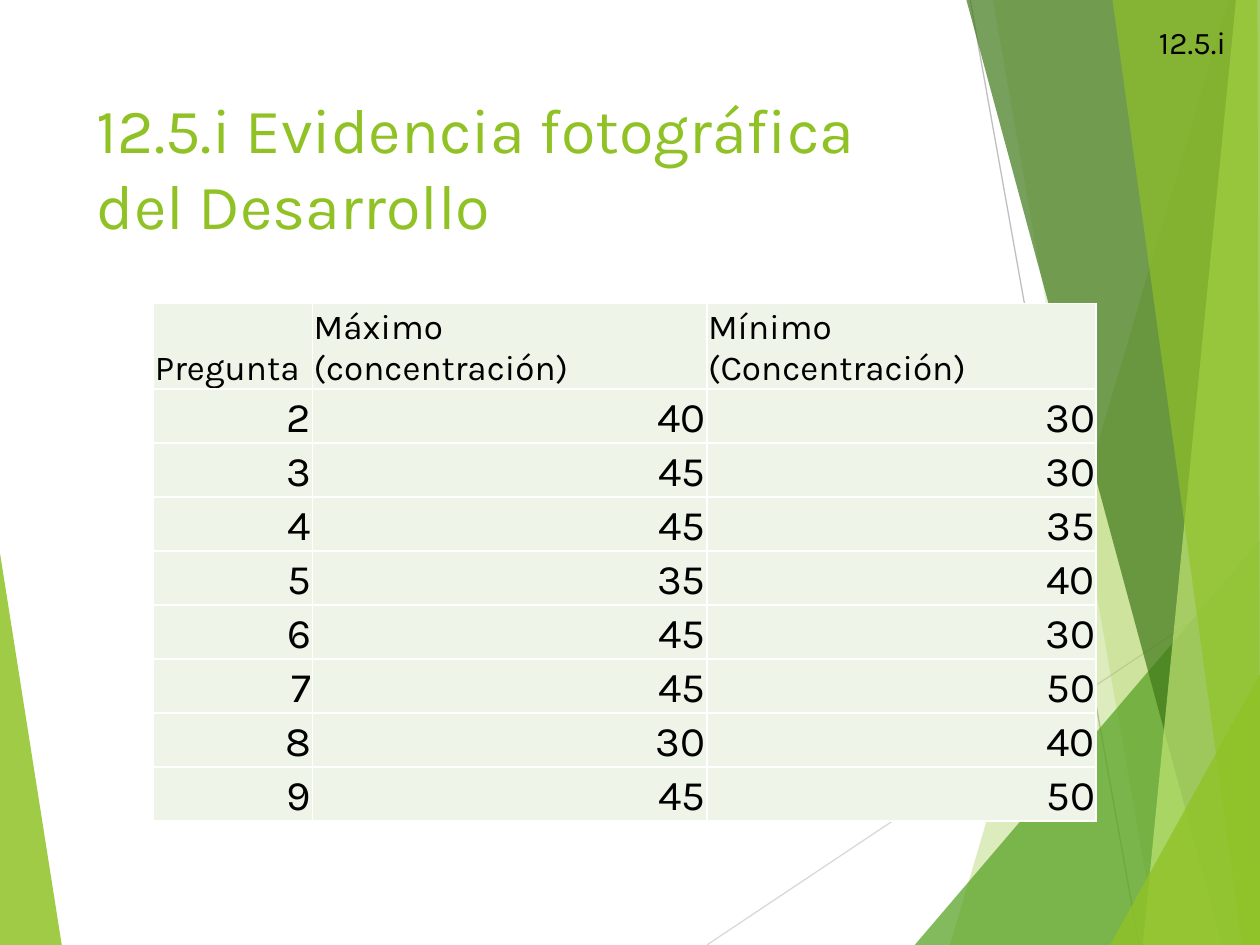
from lxml.etree import SubElement
from pptx import Presentation
from pptx.dml.color import RGBColor
from pptx.enum.shapes import MSO_CONNECTOR as Connector
from pptx.enum.text import MSO_ANCHOR as Anchor, PP_ALIGN as Align
from pptx.oxml.ns import qn
from pptx.util import Inches, Pt

FONT = "Karla"
LIME = RGBColor(0x90, 0xC2, 0x26)
GREEN = RGBColor(0x54, 0xA0, 0x21)
FOREST = RGBColor(0x3F, 0x78, 0x19)
PALE_LIME = RGBColor(0xC0, 0xE4, 0x74)
LIGHT_GRAY = RGBColor(0xD9, 0xD9, 0xD9)
GRAY = RGBColor(0xBF, 0xBF, 0xBF)
CELL_TINT = RGBColor(0xEE, 0xF4, 0xE8)
WHITE = RGBColor(0xFF, 0xFF, 0xFF)
BLACK = RGBColor(0, 0, 0)

WIDTH, HEIGHT = 10, 7.5

# Corner points, colour and opacity in percent, from back to front
LEFT_WEDGE = ([(0, 4.39), (0.49, HEIGHT), (0, HEIGHT)], LIME, 85)
RIGHT_FACETS = [
    ([(9.75, 0), (7.54, HEIGHT), (WIDTH, HEIGHT), (WIDTH, 0)], LIME, 30),
    ([(7.88, 0), (9.19, HEIGHT), (WIDTH, HEIGHT), (WIDTH, 0)], LIME, 20),
    ([(7.26, HEIGHT), (WIDTH, 4.29), (WIDTH, HEIGHT)], GREEN, 72),
    ([(7.67, 0), (9.7, HEIGHT), (WIDTH, HEIGHT), (WIDTH, 0)], FOREST, 70),
    ([(9.81, 0), (9.07, HEIGHT), (WIDTH, HEIGHT), (WIDTH, 0)], PALE_LIME, 70),
    ([(8.83, 0), (9.86, HEIGHT), (WIDTH, HEIGHT), (9.98, 0)], LIME, 65),
    ([(8.81, HEIGHT), (WIDTH, 5.35), (WIDTH, HEIGHT)], LIME, 80),
]
THIN_LINES = [
    ((5.61, HEIGHT), (WIDTH, 4.57), LIGHT_GRAY),
    ((7.7, 0), (9.04, HEIGHT), GRAY),
]

HEADINGS = ["Pregunta", "Máximo (concentración)", "Mínimo (Concentración)"]
RESULTS = [
    (2, 40, 30), (3, 45, 30), (4, 45, 35), (5, 35, 40),
    (6, 45, 30), (7, 45, 50), (8, 30, 40), (9, 45, 50),
]
COLUMN_WIDTHS = [1.26, 3.13, 3.09]


def style_text(paragraph, size, color):
    for run in paragraph.runs:
        run.font.name = FONT
        run.font.size = Pt(size)
        run.font.color.rgb = color


def add_facet(slide, corners, color, opacity):
    points = [(Inches(x), Inches(y)) for x, y in corners]
    builder = slide.shapes.build_freeform(*points[0])
    builder.add_line_segments(points[1:], close=True)
    facet = builder.convert_to_shape()
    facet.shadow.inherit = False
    facet.line.fill.background()
    facet.fill.solid()
    facet.fill.fore_color.rgb = color
    tint = facet.fill._xPr.find(qn("a:solidFill"))[0]
    SubElement(tint, qn("a:alpha"), val=str(opacity * 1000))


def add_thin_line(slide, start, end, color):
    ends = [Inches(value) for value in (*start, *end)]
    line = slide.shapes.add_connector(Connector.STRAIGHT, *ends)
    line.line.color.rgb = color
    line.line.width = Pt(0.75)
    SubElement(line._element.spPr, qn("a:effectLst"))


def add_backdrop(slide):
    add_facet(slide, *LEFT_WEDGE)
    for thin_line in THIN_LINES:
        add_thin_line(slide, *thin_line)
    for facet in RIGHT_FACETS:
        add_facet(slide, *facet)


def add_label(slide, box, text, size, color, wrap):
    label = slide.shapes.add_textbox(*map(Inches, box)).text_frame
    label.word_wrap = wrap
    label.text = text
    style_text(label.paragraphs[0], size, color)


def add_cell_borders(cell):
    properties = cell._tc.get_or_add_tcPr()
    for position, side in enumerate(("lnL", "lnR", "lnT", "lnB")):
        border = SubElement(properties, qn(f"a:{side}"), w=str(Pt(1)))
        fill = SubElement(border, qn("a:solidFill"))
        SubElement(fill, qn("a:srgbClr"), val=str(WHITE))
        # Borders come before the cell's fill
        properties.insert(position, border)


def fill_cell(cell, text, size, align):
    cell.fill.solid()
    cell.fill.fore_color.rgb = CELL_TINT
    cell.vertical_anchor = Anchor.BOTTOM
    cell.margin_left = cell.margin_right = cell.margin_top = Inches(0.01)
    cell.margin_bottom = 0
    cell.text = text
    paragraph = cell.text_frame.paragraphs[0]
    paragraph.alignment = align
    style_text(paragraph, size, BLACK)
    add_cell_borders(cell)


def add_results_table(slide, box):
    rows = [HEADINGS, *RESULTS]
    table = slide.shapes.add_table(
        len(rows), len(HEADINGS), *map(Inches, box)).table
    for column, width in zip(table.columns, COLUMN_WIDTHS):
        column.width = Inches(width)
    for row_index, values in enumerate(rows):
        size, align = (24, Align.RIGHT) if row_index else (20, Align.LEFT)
        for column_index, value in enumerate(values):
            fill_cell(table.cell(row_index, column_index), str(value), size, align)


def main():
    deck = Presentation()
    deck.slide_width, deck.slide_height = Inches(WIDTH), Inches(HEIGHT)
    slide = deck.slides.add_slide(deck.slide_layouts[6])
    add_backdrop(slide)
    # Title
    add_label(slide, (0.67, 0.67, 6.94, 1.44),
              "12.5.i Evidencia fotográfica del Desarrollo", 36, LIME, True)
    add_results_table(slide, (1.22, 2.41, sum(COLUMN_WIDTHS), 3.86))
    # Section number in the corner
    add_label(slide, (9.1, 0.13, 0.86, 0.4), "12.5.i", 18, BLACK, False)
    deck.save("out.pptx")


if __name__ == "__main__":
    main()
